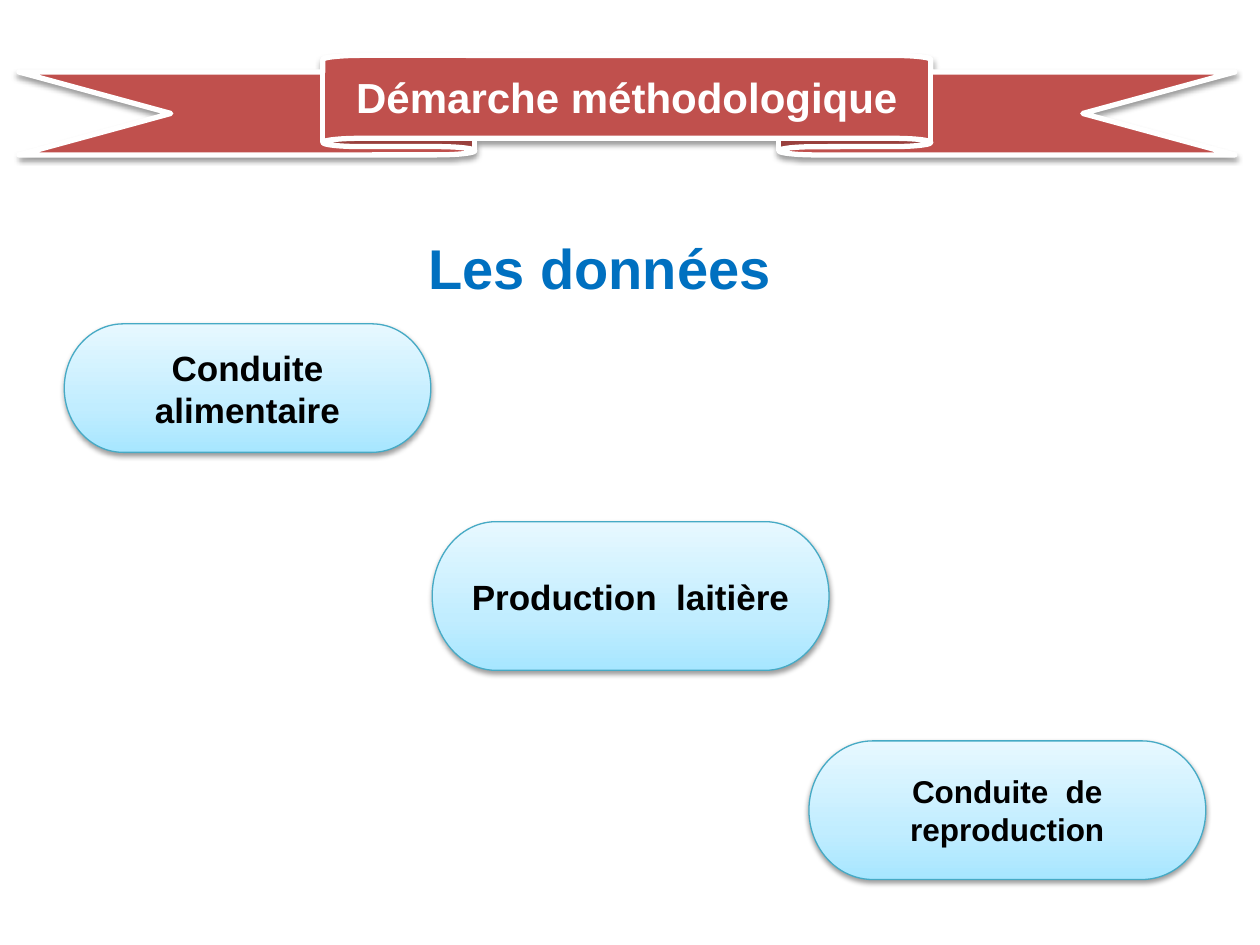
from dataclasses import dataclass

from lxml import etree
from pptx import Presentation
from pptx import util as u
from pptx.dml.color import RGBColor
from pptx.enum import shapes, text
from pptx.oxml.ns import qn


@dataclass(frozen=True)
class Theme:
    font: str = "Arial"
    heading: str = "0070C0"
    banner: str = "C0504D"
    white: str = "FFFFFF"
    black: str = "000000"
    pill_line: str = "46AAC5"
    pill_stops: tuple = ((0, "A7E6FF"), (35, "C1EDFF"), (100, "E7F8FF"))
    heading_size: int = 32
    banner_size: int = 24
    pill_size: int = 20
    small_pill_size: int = 18


@dataclass(frozen=True)
class Box:
    """Place on the slide, in hundredths of its width and height."""
    left: float
    top: float
    width: float
    height: float


@dataclass(frozen=True)
class Pill:
    label: str
    box: Box
    size: int


THEME = Theme()
WIDTH, HEIGHT = u.Inches(10), u.Inches(7.5)
HEADING_BOX = Box(5, 23.33, 90, 66)
BANNER_BOX = Box(1.5, 5.87, 96.5, 10.53)
PILLS = (
    Pill("Conduite alimentaire", Box(5.1, 34.27, 29.1, 13.6), THEME.pill_size),
    Pill("Production  laitière", Box(34.3, 55.2, 31.5, 15.73), THEME.pill_size),
    Pill("Conduite  de reproduction", Box(64.2, 78.4, 31.5, 14.67), THEME.small_pill_size),
)


def to_lengths(box: Box) -> tuple:
    return (int(WIDTH * box.left / 100), int(HEIGHT * box.top / 100),
            int(WIDTH * box.width / 100), int(HEIGHT * box.height / 100))


def write(shape, label: str, size: int, color: str, align, anchor) -> None:
    frame = shape.text_frame
    frame.word_wrap = True
    frame.auto_size = text.MSO_AUTO_SIZE.NONE
    frame.vertical_anchor = anchor
    paragraph = frame.paragraphs[0]
    paragraph.text = label
    paragraph.alignment = align
    font = paragraph.font
    font.name, font.size, font.bold = THEME.font, u.Pt(size), True
    font.color.rgb = RGBColor.from_string(color)


def add_shadow(shape) -> None:
    shape.shadow.inherit = False
    effects = shape.element.spPr.find(qn("a:effectLst"))
    shadow = etree.SubElement(effects, qn("a:outerShdw"), blurRad=str(u.Pt(3.1)),
                              dist=str(u.Pt(1.6)), dir="5400000", rotWithShape="0")
    color = etree.SubElement(shadow, qn("a:srgbClr"), val=THEME.black)
    etree.SubElement(color, qn("a:alpha"), val="38000")


def fill_gradient(shape, stops: tuple) -> None:
    shape.fill.gradient()
    shape.fill.gradient_angle = 90
    stop_list = shape.element.spPr.find(f".//{qn('a:gsLst')}")
    for old_stop in list(stop_list):
        stop_list.remove(old_stop)
    for percent, color in stops:
        stop = etree.SubElement(stop_list, qn("a:gs"), pos=str(percent * 1000))
        etree.SubElement(stop, qn("a:srgbClr"), val=color)


def add_label_shape(slide, kind, box: Box, label: str, size: int, color: str,
                    line_color: str, line_width: float):
    """Add an outlined, shadowed shape with a centred label; its fill is left to set."""
    shape = slide.shapes.add_shape(kind, *to_lengths(box))
    shape.line.color.rgb = RGBColor.from_string(line_color)
    shape.line.width = u.Pt(line_width)
    add_shadow(shape)
    write(shape, label, size, color, text.PP_ALIGN.CENTER, text.MSO_ANCHOR.MIDDLE)
    return shape


def add_banner(slide, label: str) -> None:
    banner = add_label_shape(slide, shapes.MSO_SHAPE.UP_RIBBON, BANNER_BOX, label,
                             THEME.banner_size, THEME.white, THEME.white, 3)
    banner.fill.solid()
    banner.fill.fore_color.rgb = RGBColor.from_string(THEME.banner)


def add_pill(slide, pill: Pill) -> None:
    shape = add_label_shape(slide, shapes.MSO_SHAPE.FLOWCHART_TERMINATOR, pill.box,
                            pill.label, pill.size, THEME.black, THEME.pill_line, 0.75)
    fill_gradient(shape, THEME.pill_stops)


def set_heading(slide, label: str) -> None:
    title = slide.shapes.title
    title.left, title.top, title.width, title.height = to_lengths(HEADING_BOX)
    write(title, label, THEME.heading_size, THEME.heading,
          text.PP_ALIGN.LEFT, text.MSO_ANCHOR.TOP)
    title.text_frame.margin_left = u.Inches(2.9)
    title.text_frame.margin_top = u.Inches(0.1)


def main() -> None:
    presentation = Presentation()
    presentation.slide_width, presentation.slide_height = WIDTH, HEIGHT
    slide = presentation.slides.add_slide(presentation.slide_layouts[5])
    set_heading(slide, "Les données")
    add_banner(slide, "Démarche méthodologique")
    for pill in PILLS:
        add_pill(slide, pill)
    presentation.save("out.pptx")


if __name__ == "__main__":
    main()
